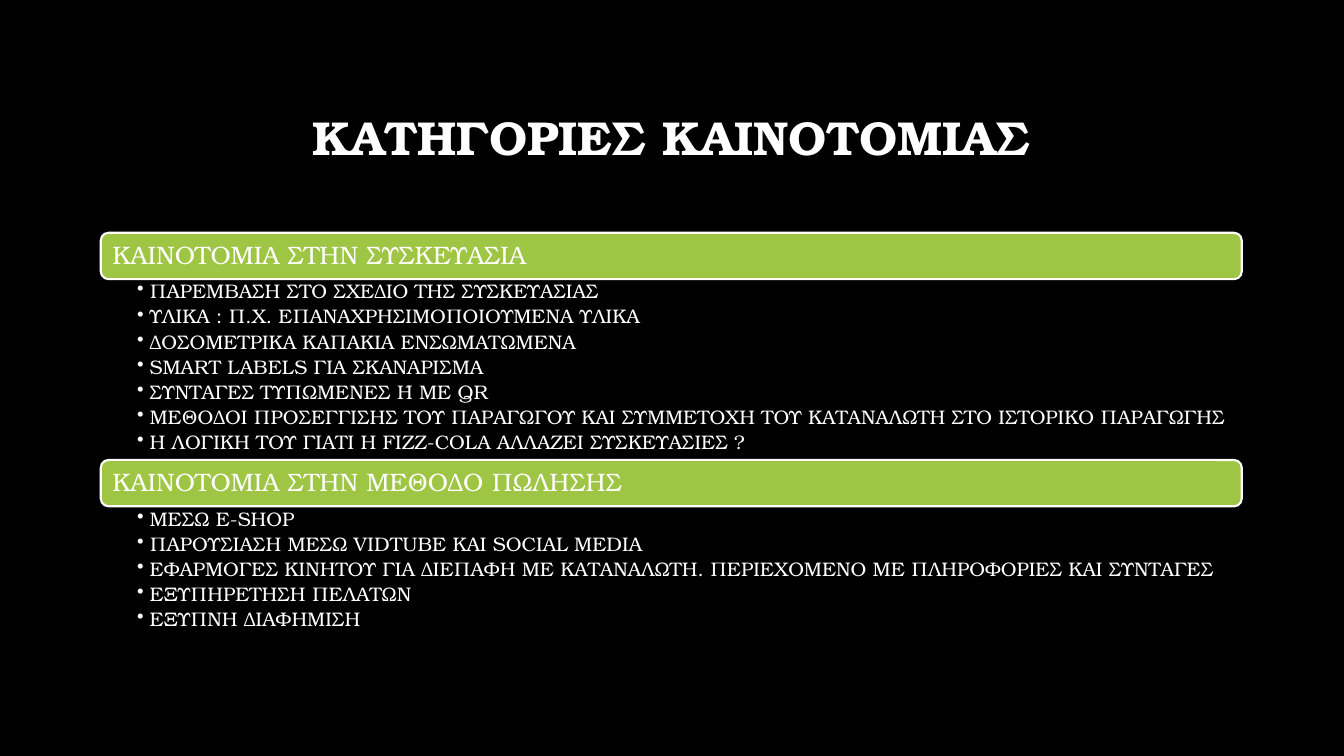
from lxml.etree import SubElement
from pptx import Presentation
from pptx.dml.color import RGBColor
from pptx.enum.shapes import MSO_SHAPE as Shape
from pptx.enum.text import MSO_ANCHOR as Anchor, PP_ALIGN as Align
from pptx.oxml.ns import qn
from pptx.util import Pt

# Content
TITLE = "ΚΑΤΗΓΟΡΙΕΣ ΚΑΙΝΟΤΟΜΙΑΣ"
GROUPS = [
    ("ΚΑΙΝΟΤΟΜΙΑ ΣΤΗΝ ΣΥΣΚΕΥΑΣΙΑ", [
        "ΠΑΡΕΜΒΑΣΗ ΣΤΟ ΣΧΕΔΙΟ ΤΗΣ ΣΥΣΚΕΥΑΣΙΑΣ",
        "ΥΛΙΚΑ : Π.Χ. ΕΠΑΝΑΧΡΗΣΙΜΟΠΟΙΟΥΜΕΝΑ ΥΛΙΚΑ",
        "ΔΟΣΟΜΕΤΡΙΚΑ ΚΑΠΑΚΙΑ ΕΝΣΩΜΑΤΩΜΕΝΑ",
        "SMART LABELS ΓΙΑ ΣΚΑΝΑΡΙΣΜΑ",
        "ΣΥΝΤΑΓΕΣ ΤΥΠΩΜΕΝΕΣ Ή ΜΕ QR",
        "ΜΕΘΟΔΟΙ ΠΡΟΣΕΓΓΙΣΗΣ ΤΟΥ ΠΑΡΑΓΩΓΟΥ ΚΑΙ ΣΥΜΜΕΤΟΧΗ ΤΟΥ "
        "ΚΑΤΑΝΑΛΩΤΗ ΣΤΟ ΙΣΤΟΡΙΚΟ ΠΑΡΑΓΩΓΗΣ",
        "Η ΛΟΓΙΚΗ ΤΟΥ ΓΙΑΤΙ Η FIZZ-COLA ΑΛΛΑΖΕΙ ΣΥΣΚΕΥΑΣΙΕΣ ?",
    ]),
    ("ΚΑΙΝΟΤΟΜΙΑ ΣΤΗΝ ΜΕΘΟΔΟ ΠΩΛΗΣΗΣ", [
        "ΜΕΣΩ E-SHOP",
        "ΠΑΡΟΥΣΙΑΣΗ ΜΕΣΩ VIDTUBE ΚΑΙ SOCIAL MEDIA",
        "ΕΦΑΡΜΟΓΕΣ ΚΙΝΗΤΟΥ ΓΙΑ ΔΙΕΠΑΦΗ ΜΕ ΚΑΤΑΝΑΛΩΤΗ. "
        "ΠΕΡΙΕΧΟΜΕΝΟ ΜΕ ΠΛΗΡΟΦΟΡΙΕΣ ΚΑΙ ΣΥΝΤΑΓΕΣ",
        "ΕΞΥΠΗΡΕΤΗΣΗ ΠΕΛΑΤΩΝ",
        "ΕΞΥΠΝΗ ΔΙΑΦΗΜΙΣΗ",
    ]),
]

# Style and measures, in points
FONT = "TeX Gyre Bonum"
BLACK = RGBColor(0, 0, 0)
WHITE = RGBColor(255, 255, 255)
GREEN = RGBColor(0x9E, 0xC5, 0x44)
LEFT, WIDTH = 72, 815
TOP, BAR, ROW = 166.3, 33.1, 18.45
INDENT = 9


def set_frame(shape, insets, anchor):
    frame = shape.text_frame
    frame.word_wrap = True
    frame.vertical_anchor = anchor
    (frame.margin_left, frame.margin_top,
     frame.margin_right, frame.margin_bottom) = map(Pt, insets)
    return frame


def write(par, text, size, after=0, align=Align.LEFT, bold=False):
    par.alignment = align
    par.line_spacing = 0.9
    par.space_after = Pt(after)
    run = par.add_run()
    run.text = text
    font = run.font
    font.name, font.size, font.bold = FONT, Pt(size), bold
    font.color.rgb = WHITE


def add_dot(par):
    props = par._p.get_or_add_pPr()
    props.set("marL", str(Pt(INDENT)))
    props.set("indent", str(-Pt(INDENT)))
    SubElement(props, qn("a:buChar")).set("char", "•")


def add_bar(slide, top, text):
    bar = slide.shapes.add_shape(
        Shape.ROUNDED_RECTANGLE, Pt(LEFT), Pt(top), Pt(WIDTH), Pt(BAR))
    bar.shadow.inherit = False
    bar.fill.solid()
    bar.fill.fore_color.rgb = GREEN
    bar.line.color.rgb = WHITE
    bar.line.width = Pt(1.5)
    frame = set_frame(bar, (6.6, 5, 6.6, 5), Anchor.MIDDLE)
    write(frame.paragraphs[0], text, 18, after=6.3)


def add_list(slide, top, items):
    box = slide.shapes.add_textbox(
        Pt(LEFT), Pt(top), Pt(WIDTH), Pt(ROW * len(items)))
    frame = set_frame(box, (25.9, 2, 10, 2), Anchor.TOP)
    for i, item in enumerate(items):
        par = frame.add_paragraph() if i else frame.paragraphs[0]
        write(par, item, 14, after=2.8)
        add_dot(par)


def main():
    deck = Presentation()
    deck.slide_width, deck.slide_height = Pt(960), Pt(540)
    slide = deck.slides.add_slide(deck.slide_layouts[6])
    slide.background.fill.solid()
    slide.background.fill.fore_color.rgb = BLACK

    # Title
    head = slide.shapes.add_textbox(Pt(LEFT), Pt(48), Pt(WIDTH), Pt(104.4))
    frame = set_frame(head, (7.2, 3.6, 7.2, 3.6), Anchor.MIDDLE)
    write(frame.paragraphs[0], TITLE, 34, align=Align.CENTER, bold=True)

    # Bars, each with its list stacked below
    top = TOP
    for name, items in GROUPS:
        add_bar(slide, top, name)
        add_list(slide, top + BAR, items)
        top += BAR + ROW * len(items)

    deck.save("out.pptx")


if __name__ == "__main__":
    main()
